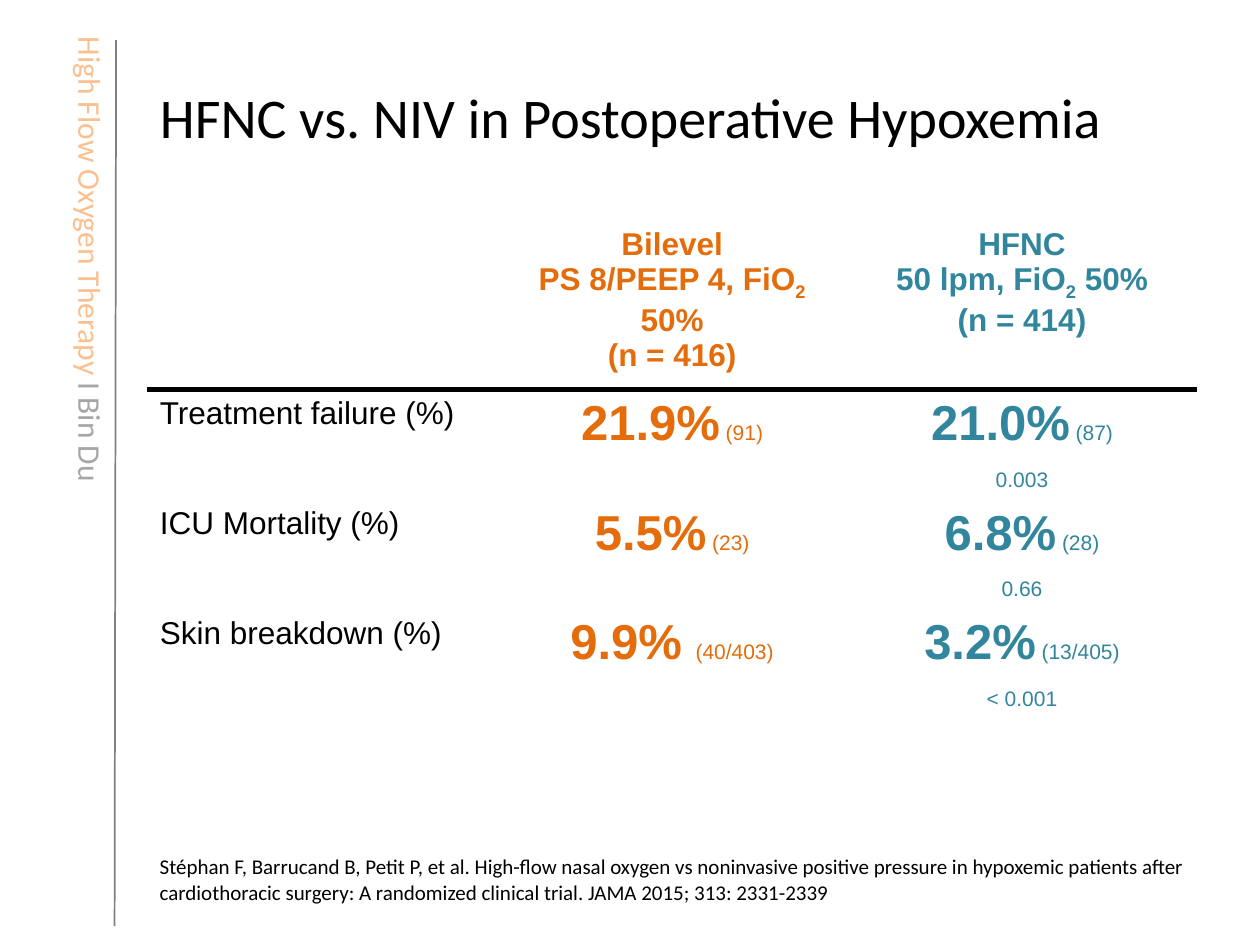
from dataclasses import dataclass
from typing import Any

import lxml.etree
import pptx
import pptx.dml.color
import pptx.enum.shapes
import pptx.enum.text
import pptx.oxml.ns
import pptx.util

Cm = pptx.util.Cm
Pt = pptx.util.Pt
ALIGN = pptx.enum.text.PP_ALIGN
ANCHOR = pptx.enum.text.MSO_ANCHOR
qn = pptx.oxml.ns.qn

COLORS = {
    "text": "000000",
    "bilevel": "E46C0A",
    "hfnc": "31859C",
    "course": "FAC090",
    "author": "A6A6A6",
    "rule": "808080",
}
LEFT, WIDTH = 2.97, 21.16
HEADER_HEIGHT, VALUE_HEIGHT, P_VALUE_HEIGHT = 3.4, 1.45, 0.75
HEADER_RULE = {(0, "lnB"), (1, "lnT")}


@dataclass
class Arm:
    name: str
    setting: str
    size: str
    color: str


@dataclass
class Outcome:
    label: str
    bilevel: tuple[str, str]
    hfnc: tuple[str, str]
    p_value: str


ARMS = [
    Arm("Bilevel", "PS 8/PEEP 4, FiO", "(n = 416)", "bilevel"),
    Arm("HFNC", "50 lpm, FiO", "(n = 414)", "hfnc"),
]
OUTCOMES = [
    Outcome("Treatment failure (%)", ("21.9%", " (91)"), ("21.0%", " (87)"), "0.003"),
    Outcome("ICU Mortality (%)", ("5.5%", " (23)"), ("6.8%", " (28)"), "0.66"),
    Outcome("Skin breakdown (%)", ("9.9% ", "(40/403)"), ("3.2%", " (13/405)"), "< 0.001"),
]


def add_run(p: Any, text: str, *, size: float = 18, color: str = "text",
            font: str = "Arial", bold: bool = False, subscript: bool = False) -> None:
    r = p.add_run()
    r.text = text
    r.font.size = Pt(size)
    r.font.name = font
    r.font.bold = bold
    r.font.color.rgb = pptx.dml.color.RGBColor.from_string(COLORS[color])
    if subscript:
        r._r.get_or_add_rPr().set("baseline", "-25000")


def add_text_box(s: Any, left: float, top: float, width: float, height: float,
                 wrap: bool = True) -> Any:
    sp = s.shapes.add_textbox(Cm(left), Cm(top), Cm(width), Cm(height))
    sp.text_frame.word_wrap = wrap
    return sp


def add_sidebar(s: Any) -> None:
    line = s.shapes.add_connector(pptx.enum.shapes.MSO_CONNECTOR.STRAIGHT,
                                  Cm(2.34), Cm(0.81), Cm(2.31), Cm(18.67))
    line.line.width = Pt(1)
    line.line.color.rgb = pptx.dml.color.RGBColor.from_string(COLORS["rule"])
    lxml.etree.SubElement(line._element.spPr, qn("a:effectLst"))

    sp = add_text_box(s, -2.97, 4.78, 9.6, 1.02, wrap=False)
    sp.rotation = 90
    p = sp.text_frame.paragraphs[0]
    add_run(p, "High Flow Oxygen Therapy ", color="course", font="Calibri")
    add_run(p, "Ι Bin Du", color="author", font="Calibri")


def add_title(s: Any, text: str) -> None:
    sp = s.shapes.title
    sp.left, sp.top, sp.width, sp.height = Cm(LEFT), Cm(0.76), Cm(WIDTH), Cm(3.18)
    tf = sp.text_frame
    tf.vertical_anchor = ANCHOR.MIDDLE
    p = tf.paragraphs[0]
    p.alignment = ALIGN.LEFT
    add_run(p, text, size=32, font="Calibri")


def set_borders(cell: Any, row: int) -> None:
    """Draw the rule under the header and clear every other border."""
    tcPr = cell._tc.get_or_add_tcPr()
    for i, side in enumerate(("lnL", "lnR", "lnT", "lnB")):
        ln = lxml.etree.Element(qn(f"a:{side}"))
        if (row, side) in HEADER_RULE:
            ln.set("w", str(Pt(3)))
            fill = lxml.etree.SubElement(ln, qn("a:solidFill"))
            lxml.etree.SubElement(fill, qn("a:srgbClr"), val=COLORS["text"])
        else:
            lxml.etree.SubElement(ln, qn("a:noFill"))
        tcPr.insert(i, ln)


def centered(cell: Any) -> Any:
    p = cell.text_frame.paragraphs[0]
    p.alignment = ALIGN.CENTER
    return p


def fill_header(cell: Any, arm: Arm) -> None:
    style = {"color": arm.color, "bold": True}
    add_run(centered(cell), arm.name, **style)
    setting, size = (cell.text_frame.add_paragraph() for _ in range(2))
    setting.alignment = size.alignment = ALIGN.CENTER
    add_run(setting, arm.setting, **style)
    add_run(setting, "2", subscript=True, **style)
    add_run(setting, " 50%", **style)
    add_run(size, arm.size, **style)


def fill_value(cell: Any, value: tuple[str, str], color: str) -> None:
    rate, count = value
    p = centered(cell)
    add_run(p, rate, size=28, color=color, bold=True)
    add_run(p, count, size=12, color=color)


def shrink_empty(cell: Any) -> None:
    """Keep an empty cell from stretching its row."""
    p = cell.text_frame.paragraphs[0]
    lxml.etree.SubElement(p._p, qn("a:endParaRPr"), sz="1000")


def add_results_table(s: Any) -> None:
    heights = [HEADER_HEIGHT] + [VALUE_HEIGHT, P_VALUE_HEIGHT] * len(OUTCOMES)
    columns = len(ARMS) + 1
    table = s.shapes.add_table(len(heights), columns, Cm(LEFT), Cm(4.45),
                               Cm(WIDTH), Cm(sum(heights))).table
    table.first_row = table.horz_banding = False
    for column in table.columns:
        column.width = Cm(WIDTH / columns)
    for i, height in enumerate(heights):
        table.rows[i].height = Cm(height)
        for cell in table.rows[i].cells:
            cell.fill.background()
            set_borders(cell, i)

    for col, arm in enumerate(ARMS, start=1):
        fill_header(table.cell(0, col), arm)
    for i, outcome in enumerate(OUTCOMES):
        row = 1 + 2 * i
        add_run(table.cell(row, 0).text_frame.paragraphs[0], outcome.label)
        fill_value(table.cell(row, 1), outcome.bilevel, "bilevel")
        fill_value(table.cell(row, 2), outcome.hfnc, "hfnc")
        add_run(centered(table.cell(row + 1, 2)), outcome.p_value, size=12, color="hfnc")
        for col in (0, 1):
            shrink_empty(table.cell(row + 1, col))


def add_citation(s: Any, text: str) -> None:
    sp = add_text_box(s, LEFT, 17.09, WIDTH, 1.27)
    add_run(sp.text_frame.paragraphs[0], text, size=12, font="Calibri")


def main() -> None:
    prs = pptx.Presentation()
    prs.slide_width, prs.slide_height = Cm(25.4), Cm(19.05)
    s = prs.slides.add_slide(prs.slide_layouts.get_by_name("Title Only"))
    add_sidebar(s)
    add_title(s, "HFNC vs. NIV in Postoperative Hypoxemia")
    add_citation(s, "Stéphan F, Barrucand B, Petit P, et al. High-flow nasal oxygen vs "
                    "noninvasive positive pressure in hypoxemic patients after "
                    "cardiothoracic surgery: A randomized clinical trial. "
                    "JAMA 2015; 313: 2331-2339")
    add_results_table(s)
    prs.save("out.pptx")


if __name__ == "__main__":
    main()
